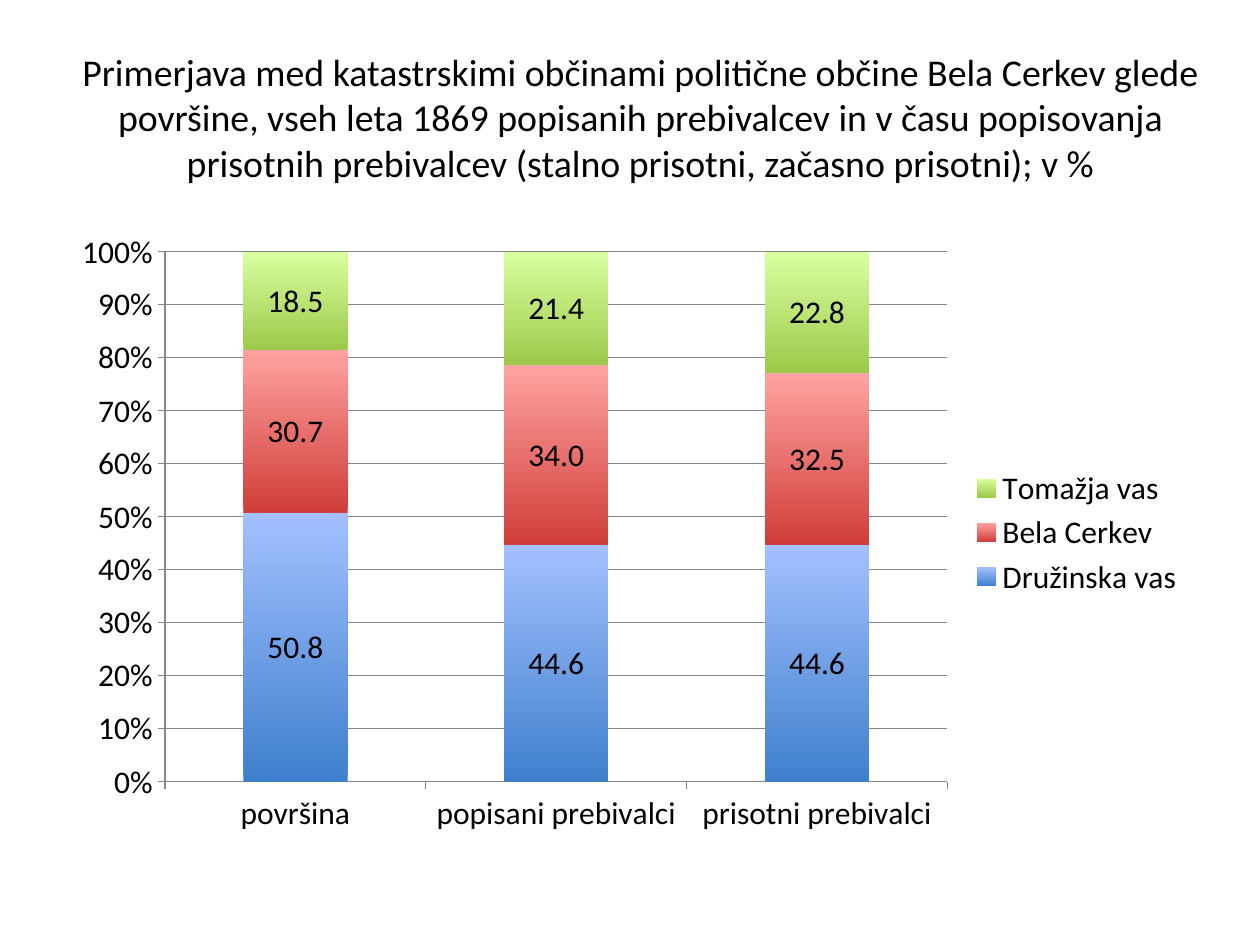
from lxml.etree import SubElement
from pptx import Presentation
from pptx.chart.data import CategoryChartData
from pptx.dml.color import RGBColor
from pptx.enum.chart import XL_CHART_TYPE, XL_LABEL_POSITION, XL_LEGEND_POSITION, XL_TICK_MARK
from pptx.enum.text import MSO_ANCHOR, MSO_AUTO_SIZE, PP_ALIGN
from pptx.oxml.ns import qn
from pptx.util import Cm, Pt

FONT = "Calibri"
BLACK = "000000"
GREY = "878787"
TITLE = (
    "Primerjava med katastrskimi občinami politične občine Bela Cerkev glede "
    "površine, vseh leta 1869 popisanih prebivalcev in v času popisovanja "
    "prisotnih prebivalcev (stalno prisotni, začasno prisotni); v %"
)
CATEGORIES = ["površina", "popisani prebivalci", "prisotni prebivalci"]
VILLAGES = [
    ("Družinska vas", (50.8, 44.6, 44.6), "3F80CD", "A3C0FF"),
    ("Bela Cerkev", (30.7, 34.0, 32.5), "D03D39", "FFA3A1"),
    ("Tomažja vas", (18.5, 21.4, 22.8), "9DC94A", "DAFFA0"),
]


def rgb(value):
    return RGBColor.from_string(value)


def format_font(font, size=18, color=BLACK):
    font.name = FONT
    font.size = Pt(size)
    font.bold = False
    font.color.rgb = rgb(color)


def write_text(tf, text, size=18, color=BLACK, align=PP_ALIGN.CENTER):
    p = tf.paragraphs[0]
    p.alignment = align
    r = p.add_run()
    r.text = text
    format_font(r.font, size, color)


def add_title(slide, left, top, width, height):
    sp = slide.shapes.title
    sp.left, sp.top, sp.width, sp.height = left, top, width, height
    tf = sp.text_frame
    tf.word_wrap = True
    tf.auto_size = MSO_AUTO_SIZE.NONE
    tf.vertical_anchor = MSO_ANCHOR.MIDDLE
    write_text(tf, TITLE, size=21.6)


def style_axis(axis):
    axis.major_tick_mark = XL_TICK_MARK.OUTSIDE
    axis.minor_tick_mark = XL_TICK_MARK.NONE
    axis.format.line.color.rgb = rgb(GREY)
    axis.format.line.width = Pt(0.75)
    format_font(axis.tick_labels.font)


def style_series(series, bottom, top):
    fill = series.format.fill
    fill.gradient()
    fill.gradient_angle = 90
    for stop, color in zip(fill.gradient_stops, (bottom, top)):
        stop.color.rgb = rgb(color)
    labels = series.data_labels
    labels.show_value = True
    labels.number_format = "0.0"
    labels.number_format_is_linked = False
    labels.position = XL_LABEL_POSITION.CENTER
    format_font(labels.font)


def place_plot(chart, x, y, w, h):
    area = chart._chartSpace.chart.plotArea
    layout = area.find(qn("c:layout"))
    if layout is None:
        layout = SubElement(area, qn("c:layout"))
        area.insert(0, layout)
    manual = SubElement(layout, qn("c:manualLayout"))
    settings = [("layoutTarget", "inner"), ("xMode", "edge"), ("yMode", "edge"),
                ("x", x), ("y", y), ("w", w), ("h", h)]
    for tag, value in settings:
        SubElement(manual, qn(f"c:{tag}")).set("val", str(value))


def add_village_chart(slide, left, top, width, height):
    data = CategoryChartData(number_format="0.0")
    data.categories = CATEGORIES
    for name, values, *_ in VILLAGES:
        data.add_series(name, values)
    chart = slide.shapes.add_chart(
        XL_CHART_TYPE.COLUMN_STACKED_100, left, top, width, height, data
    ).chart
    format_font(chart.font)
    chart.has_title = False
    chart.has_legend = True
    chart.legend.position = XL_LEGEND_POSITION.RIGHT
    chart.legend.include_in_layout = False
    format_font(chart.legend.font)

    plot = chart.plots[0]
    plot.gap_width = 150
    plot.overlap = 100
    plot.vary_by_categories = False
    for series, (*_, bottom, top_color) in zip(plot.series, VILLAGES):
        style_series(series, bottom, top_color)

    style_axis(chart.category_axis)
    axis = chart.value_axis
    style_axis(axis)
    axis.minimum_scale, axis.maximum_scale, axis.major_unit = 0, 1, 0.1
    axis.tick_labels.number_format = "0%"
    axis.tick_labels.number_format_is_linked = False
    axis.has_major_gridlines = True
    axis.major_gridlines.format.line.color.rgb = rgb(GREY)
    axis.major_gridlines.format.line.width = Pt(0.75)
    place_plot(chart, 0.09, 0.05, 0.69, 0.85)


def main():
    prs = Presentation()
    prs.slide_width, prs.slide_height = Cm(25.4), Cm(19.05)
    slide = prs.slides.add_slide(prs.slide_layouts[5])
    add_title(slide, Cm(1.27), Cm(0.76), Cm(23.29), Cm(3.18))
    add_village_chart(slide, Cm(1.27), Cm(4.45), Cm(22.86), Cm(12.57))
    prs.save("out.pptx")


if __name__ == "__main__":
    main()
